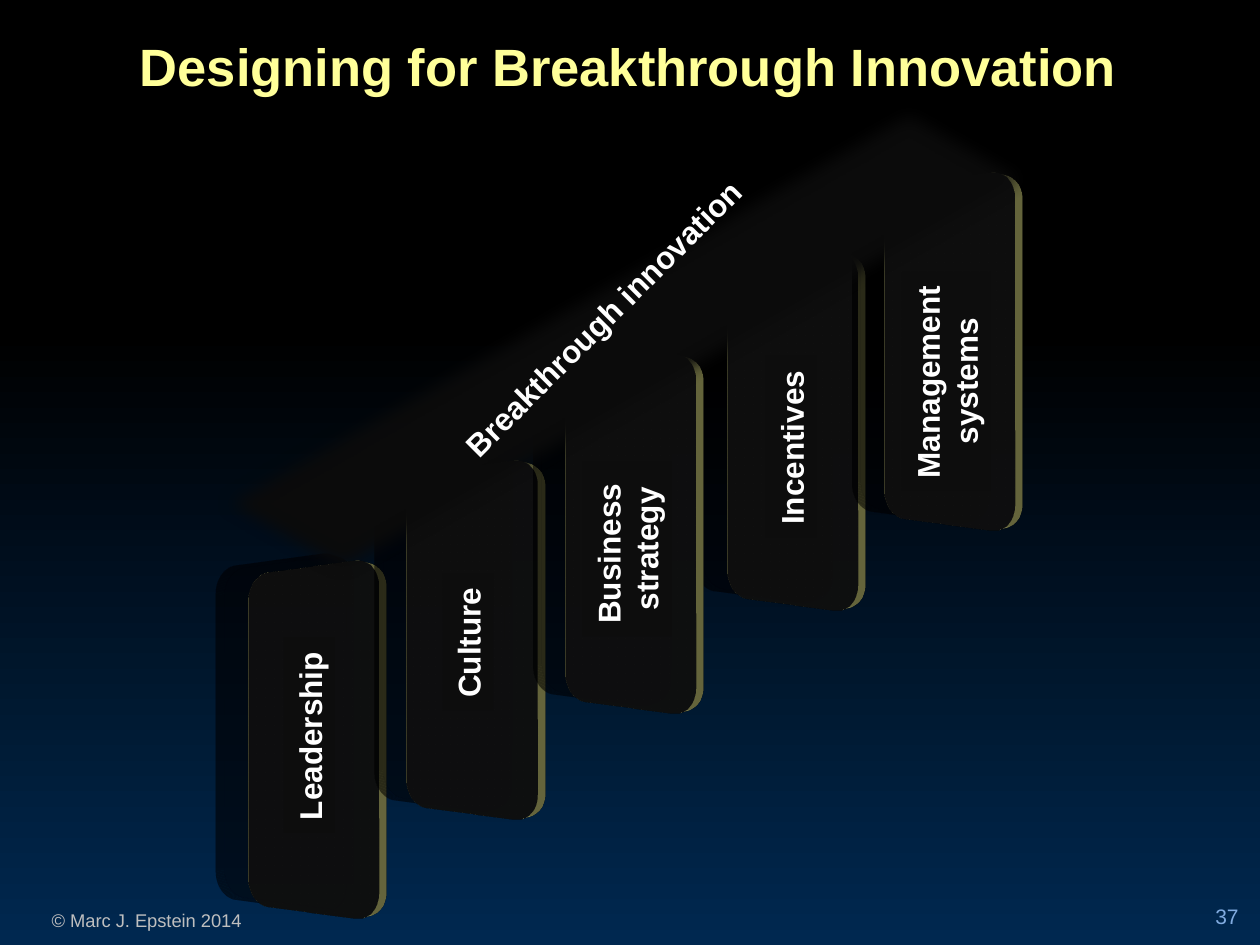
from lxml.etree import SubElement

from pptx import Presentation
from pptx.dml.color import RGBColor
from pptx.enum.shapes import MSO_SHAPE
from pptx.enum.text import MSO_ANCHOR, PP_ALIGN
from pptx.oxml.ns import qn
from pptx.util import Pt

COLORS = {
    "night": "000000", "navy": "002850", "title": "FFFF99", "white": "FFFFFF",
    "credit": "BFBFBF", "number": "81ABE0", "panel": "0D0D0D",
    "panel_line": "F79646", "beam_line": "FFC000", "edge": "FFFF99",
}
PANEL_WIDTH, PANEL_HEIGHT = 90.7, 197.3

PILLARS = [
    (["Leadership"], 131.8, 324, (121, 405.4, 111.6, 29.1)),
    (["Culture"], 222.5, 267.1, (228.2, 352.1, 78.5, 29.1)),
    (["Incentives"], 405.4, 147.6, (400.3, 240.5, 103.7, 29.1)),
    (["Management", "systems"], 495.4, 102.2, (478.1, 192.2, 125.3, 51.1)),
    (["Business", "strategy"], 313.2, 206.6, (308.2, 288, 100.1, 51.1)),
]


def rgb(name):
    return RGBColor.from_string(COLORS[name])


def child(parent, tag, **attributes):
    return SubElement(parent, qn(f"a:{tag}"),
                      {key: str(value) for key, value in attributes.items()})


def add_filled(slide, kind, box, line=None):
    block = slide.shapes.add_shape(kind, *map(Pt, box))
    block.shadow.inherit = False
    block.fill.solid()
    block.fill.fore_color.rgb = rgb("panel")
    if line:
        block.line.color.rgb = rgb(line)
        block.line.width = Pt(0.75)
    else:
        block.line.fill.background()
    return block


def add_shadow(block, opacity, blur, distance, angle, **scale):
    effects = block._element.spPr.find(qn("a:effectLst"))
    shadow = child(effects, "outerShdw", blurRad=Pt(blur), dist=Pt(distance),
                   dir=angle * 60000, **scale)
    color = child(shadow, "srgbClr", val=COLORS["night"])
    child(color, "alpha", val=opacity * 1000)
    return effects


def add_scene(block, camera, turn=None, **lens):
    scene = child(block._element.spPr, "scene3d")
    view = child(scene, "camera", prst=camera, **lens)
    if turn is not None:
        child(view, "rot", lat=0, lon=turn * 60000, rev=0)
    child(scene, "lightRig", rig="flood", dir="t")


def add_panel(slide, left, top):
    panel = add_filled(slide, MSO_SHAPE.ROUNDED_RECTANGLE,
                       (left, top, PANEL_WIDTH, PANEL_HEIGHT), "panel_line")
    add_shadow(panel, 18, 14.5, 19, 192, sx=110000, sy=110000, algn="ctr")
    add_scene(panel, "perspectiveFront", 35, fov=5100000)
    depth = child(panel._element.spPr, "sp3d",
                  extrusionH=Pt(8.5), prstMaterial="plastic")
    child(depth, "bevelT", w=Pt(6.5), h=Pt(5), prst="divot")
    child(depth, "bevelB")
    child(child(depth, "extrusionClr"), "srgbClr", val=COLORS["edge"])


def write(shape, lines, size, color, align, bold=False):
    frame = shape.text_frame
    frame.text = "\n".join(lines)
    for paragraph in frame.paragraphs:
        paragraph.alignment = align
        font = paragraph.font
        font.name, font.size, font.bold = "Arial", Pt(size), bold
        font.color.rgb = rgb(color)
    return frame


def add_label(slide, lines, box):
    label = add_filled(slide, MSO_SHAPE.RECTANGLE, box)
    label.rotation = 270
    frame = write(label, lines, 18, "white", PP_ALIGN.CENTER, bold=True)
    frame.paragraphs[0].alignment = PP_ALIGN.LEFT
    frame.word_wrap = False


def add_text(slide, text, box, size, color, align, bold=False, rotation=0):
    caption = slide.shapes.add_textbox(*map(Pt, box))
    caption.rotation = rotation
    frame = write(caption, [text], size, color, align, bold)
    frame.word_wrap = True
    frame.vertical_anchor = MSO_ANCHOR.MIDDLE
    return frame


def add_beam(slide):
    beam = add_filled(slide, MSO_SHAPE.ROUNDED_RECTANGLE,
                      (66.2, 133.9, 581.8, 120.2), "beam_line")
    effects = add_shadow(beam, 40, 4, 3, 45)
    child(effects, "softEdge", rad=Pt(10))
    add_scene(beam, "isometricTopUp")
    add_text(slide, "Breakthrough innovation", (224.4, 167.3, 240, 28.8), 18,
             "white", PP_ALIGN.CENTER, bold=True, rotation=-45)


def set_background(slide):
    fill = slide.background.fill
    fill.gradient()
    fill.gradient_angle = 270
    for stop, name, position in zip(fill.gradient_stops,
                                    ("night", "navy"), (0.35, 1)):
        stop.color.rgb = rgb(name)
        stop.position = position


def set_title(slide, text):
    title = slide.shapes.title
    title.left, title.top, title.width, title.height = map(Pt, (-0.9, 15.6, 720, 43.9))
    frame = write(title, [text], 30, "title", PP_ALIGN.CENTER, bold=True)
    frame.vertical_anchor = MSO_ANCHOR.MIDDLE


def main():
    deck = Presentation()
    deck.slide_width, deck.slide_height = Pt(720), Pt(540)
    slide = deck.slides.add_slide(deck.slide_layouts[5])
    set_background(slide)
    add_text(slide, "© Marc J. Epstein 2014", (-12.2, 515.7, 192.2, 20.2),
             10.5, "credit", PP_ALIGN.CENTER)
    number = add_text(slide, "37", (648, 505.4, 59.8, 28.8),
                      12, "number", PP_ALIGN.RIGHT)
    number.margin_left = number.margin_right = 0
    number.vertical_anchor = MSO_ANCHOR.BOTTOM
    set_title(slide, "Designing for Breakthrough Innovation")
    for lines, left, top, label_box in PILLARS:
        add_panel(slide, left, top)
        add_label(slide, lines, label_box)
    add_beam(slide)
    deck.save("out.pptx")


if __name__ == "__main__":
    main()
